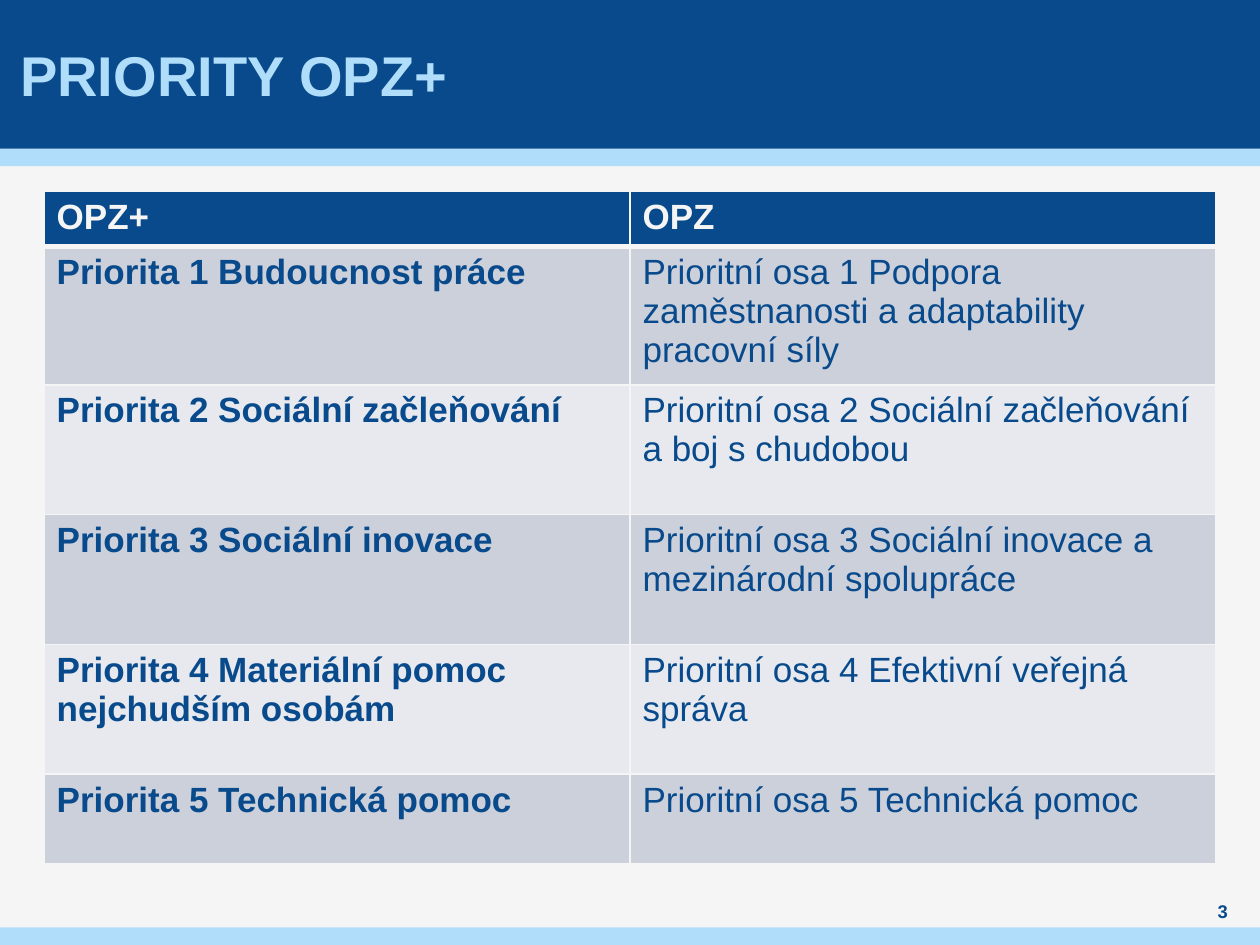
from lxml import etree
from pptx import Presentation, util as u
from pptx.dml.color import RGBColor
from pptx.enum import shapes, text
from pptx.oxml import ns

NAVY, SKY, PAPER = "084A8B", "AFDDFA", "F5F5F5"
BANDS = ("CCD0DA", "E7E9EE")
WIDTH, HEIGHT = 10, 7.5
HEADER, STRIPE = 1.18, 0.14
ROW_HEIGHTS = [0.41] + [1.03] * 4 + [0.71]
PRIORITIES = [
    ("OPZ+", "OPZ"),
    ("Priorita 1 Budoucnost práce",
     "Prioritní osa 1 Podpora zaměstnanosti a adaptability pracovní síly"),
    ("Priorita 2 Sociální začleňování",
     "Prioritní osa 2 Sociální začleňování a boj s chudobou"),
    ("Priorita 3 Sociální inovace",
     "Prioritní osa 3 Sociální inovace a mezinárodní spolupráce"),
    ("Priorita 4 Materiální pomoc nejchudším osobám",
     "Prioritní osa 4 Efektivní veřejná správa"),
    ("Priorita 5 Technická pomoc", "Prioritní osa 5 Technická pomoc"),
]


def paint(fill, colour):
    """Give a fill one solid colour."""
    fill.solid()
    fill.fore_color.rgb = RGBColor.from_string(colour)


def inches(box):
    """Turn a box of plain numbers into lengths."""
    return [u.Inches(length) for length in box]


def write(frame, words, size, colour, bold=True, align=text.PP_ALIGN.LEFT):
    """Fill a text frame with one formatted paragraph."""
    frame.text = words
    paragraph = frame.paragraphs[0]
    paragraph.alignment = align
    font = paragraph.runs[0].font
    font.name, font.size, font.bold = "Arial", u.Pt(size), bold
    font.color.rgb = RGBColor.from_string(colour)


def set_margins(frame, side):
    """Centre the text vertically with equal side margins only."""
    frame.word_wrap = True
    frame.vertical_anchor = text.MSO_ANCHOR.MIDDLE
    frame.margin_left = frame.margin_right = u.Inches(side)
    frame.margin_top = frame.margin_bottom = 0


def add_band(slide, top, height, colour):
    """Draw a full-width band."""
    band = slide.shapes.add_shape(shapes.MSO_SHAPE.RECTANGLE,
                                  *inches((0, top, WIDTH, height)))
    band.shadow.inherit = False
    paint(band.fill, colour)
    band.line.fill.background()


def place_title(slide, box, words):
    """Move the title placeholder into its box and format it."""
    title = slide.shapes.title
    title.left, title.top, title.width, title.height = inches(box)
    write(title.text_frame, words, 32, SKY)
    set_margins(title.text_frame, 0.04)


def add_page_number(slide, box, number):
    """Add the page number."""
    frame = slide.shapes.add_textbox(*inches(box)).text_frame
    write(frame, number, 10.5, NAVY, align=text.PP_ALIGN.CENTER)
    set_margins(frame, 0)


def set_borders(cell, widths):
    """Draw cell borders, with widths in points by side, before the fill."""
    properties = cell._tc.get_or_add_tcPr()
    for side, width in widths.items():
        line = etree.SubElement(properties, ns.qn(f"a:ln{side}"), w=str(u.Pt(width)))
        fill = etree.SubElement(line, ns.qn("a:solidFill"))
        etree.SubElement(fill, ns.qn("a:srgbClr"), val=PAPER)


def add_priority_table(slide, left, top, width):
    """Add the two-column comparison with a header and banded rows."""
    box = inches((left, top, width, sum(ROW_HEIGHTS)))
    table = slide.shapes.add_table(len(PRIORITIES), 2, *box).table
    for index, (height, entries) in enumerate(zip(ROW_HEIGHTS, PRIORITIES)):
        table.rows[index].height = u.Inches(height)
        is_header = index == 0
        for column, words in enumerate(entries):
            cell = table.cell(index, column)
            write(cell.text_frame, words, 20, PAPER if is_header else NAVY,
                  bold=is_header or column == 0)
            set_borders(cell, {"L": 1, "R": 1, "T": 3 if index == 1 else 1,
                               "B": 3 if is_header else 1})
            paint(cell.fill, NAVY if is_header else BANDS[(index - 1) % 2])


def main():
    """Build and save the slide."""
    presentation = Presentation()
    presentation.slide_width, presentation.slide_height = inches((WIDTH, HEIGHT))
    slide = presentation.slides.add_slide(presentation.slide_layouts[5])
    paint(slide.background.fill, PAPER)
    add_band(slide, HEADER, STRIPE, SKY)
    add_band(slide, 0, HEADER, NAVY)
    add_band(slide, HEIGHT - STRIPE, STRIPE, SKY)
    title = slide.shapes.title._element
    title.getparent().append(title)
    place_title(slide, (0.12, 0, 9.84, HEADER), "PRIORITY OPZ+")
    add_page_number(slide, (9.45, 7.13, 0.51, 0.2), "3")
    add_priority_table(slide, 0.35, 1.52, 9.3)
    presentation.save("out.pptx")


if __name__ == "__main__":
    main()
